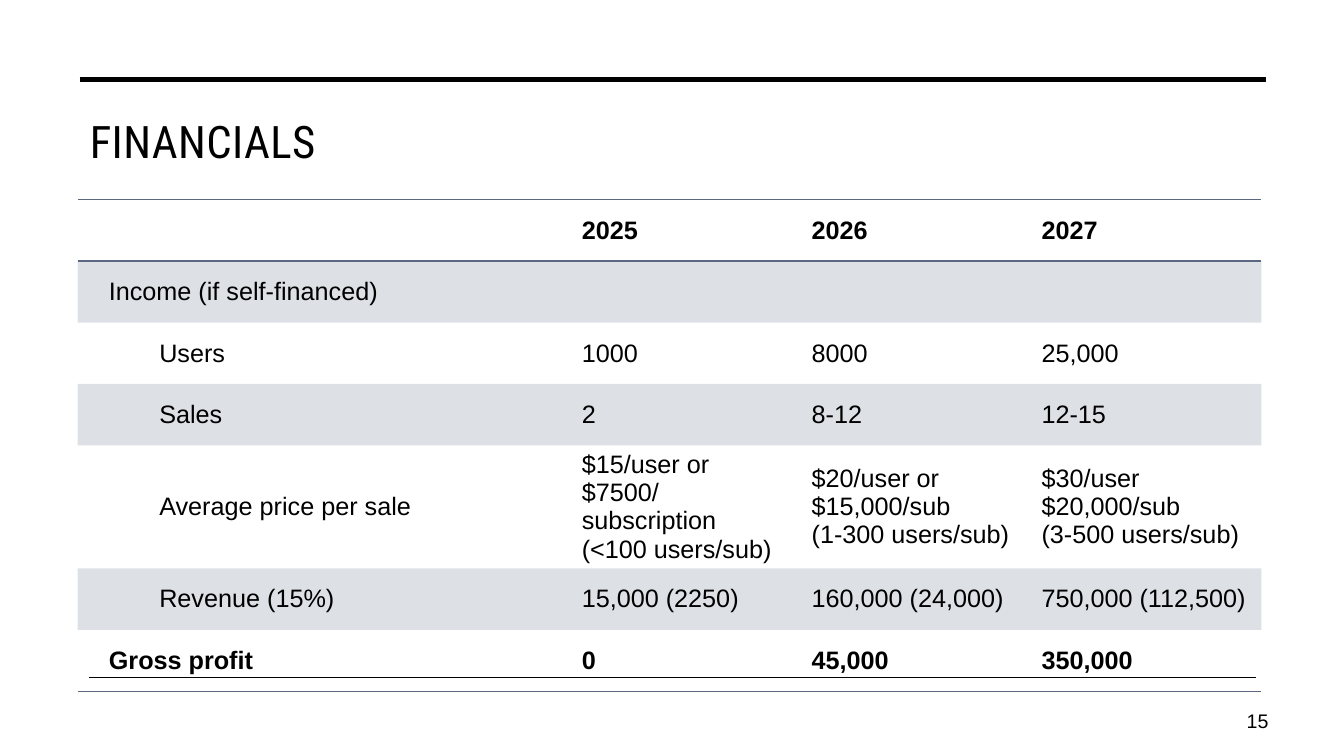
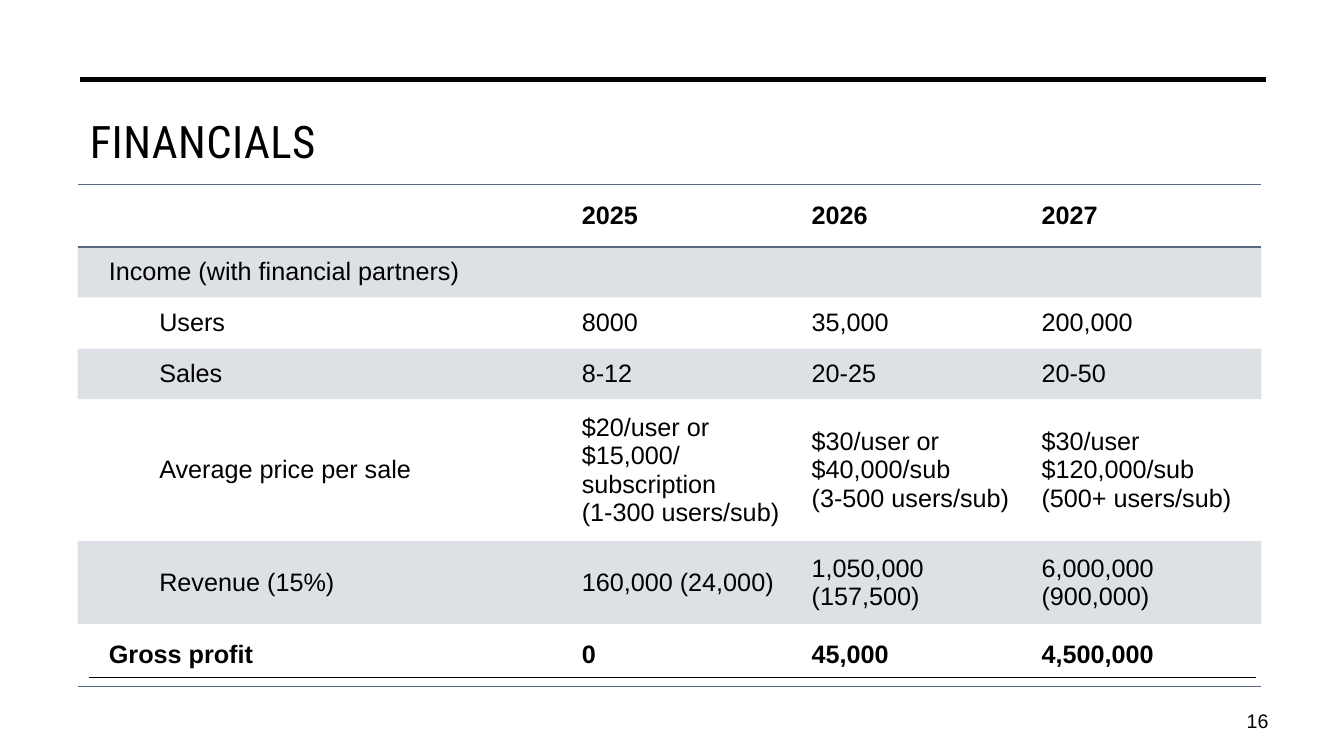
from lxml.etree import SubElement
from pptx import Presentation
from pptx.dml.color import RGBColor
from pptx.enum.shapes import MSO_CONNECTOR
from pptx.enum.text import MSO_ANCHOR, MSO_AUTO_SIZE, PP_ALIGN
from pptx.oxml.ns import qn
from pptx.util import Inches, Pt

COLORS = {"text": "000000", "slate": "596781"}
TITLE_FONT = "Roboto Condensed"
BODY_FONT = "Arial"
NO_GRID_STYLE = "{2D5ABB26-0587-4C30-8999-92F81FD0307C}"
COLUMN_WIDTHS = [4.9, 2.28, 2.28, 2.28]
HEADER = ["", "2025", "2026", "2027"]
INDENTED_ROWS = range(2, 6)
BANDED_ROWS = (1, 3, 5)

financials = [
    {
        "number": "15",
        "top": 1.98,
        "heights": [0.61, 0.61, 0.61, 0.61, 1.22, 0.61, 0.61],
        "rows": [
            HEADER,
            ["Income (if self-financed)", "", "", ""],
            ["Users", "1000", "8000", "25,000"],
            ["Sales", "2", "8-12", "12-15"],
            [
                "Average price per sale",
                "$15/user or\n$7500/subscription\n(<100 users/sub)",
                "$20/user or\n$15,000/sub\n(1-300 users/sub)",
                "$30/user\n$20,000/sub\n(3-500 users/sub)",
            ],
            ["Revenue (15%)", "15,000 (2250)", "160,000 (24,000)", "750,000 (112,500)"],
            ["Gross profit", "0", "45,000", "350,000"],
        ],
    },
    {
        "number": "16",
        "top": 1.83,
        "heights": [0.62, 0.5, 0.51, 0.5, 1.41, 0.82, 0.62],
        "rows": [
            HEADER,
            ["Income (with financial partners)", "", "", ""],
            ["Users", "8000", "35,000", "200,000"],
            ["Sales", "8-12", "20-25", "20-50"],
            [
                "Average price per sale",
                "$20/user or\n$15,000/\nsubscription\n(1-300 users/sub)",
                "$30/user or\n$40,000/sub\n(3-500 users/sub)",
                "$30/user\n$120,000/sub\n(500+ users/sub)",
            ],
            ["Revenue (15%)", "160,000 (24,000)", "1,050,000 (157,500)", "6,000,000 (900,000)"],
            ["Gross profit", "0", "45,000", "4,500,000"],
        ],
    },
]


def style_font(paragraph, name, size, bold=False):
    paragraph.font.name = name
    paragraph.font.size = Pt(size)
    paragraph.font.bold = bold
    paragraph.font.color.rgb = RGBColor.from_string(COLORS["text"])


def add_border(cell, side):
    line = SubElement(cell._tc.get_or_add_tcPr(), qn(f"a:{side}"), w=str(Pt(1)))
    fill = SubElement(line, qn("a:solidFill"))
    SubElement(fill, qn("a:srgbClr"), val=COLORS["slate"])


presentation = Presentation()
presentation.slide_width = Inches(13.33)
presentation.slide_height = Inches(7.5)
layout = presentation.slide_layouts[5]
slides = [presentation.slides.add_slide(layout) for _ in financials]

for left, right, y, width in [(0.79, 12.56, 0.79, 3.5), (0.88, 12.46, 6.72, 1)]:
    rule = slides[0].shapes.add_connector(
        MSO_CONNECTOR.STRAIGHT, Inches(left), Inches(y), Inches(right), Inches(y)
    )
    rule.line.color.rgb = RGBColor.from_string(COLORS["text"])
    rule.line.width = Pt(width)
    SubElement(rule.element.spPr, qn("a:effectLst"))
    layout.shapes.element.append(rule.element)

for slide, content in zip(slides, financials):
    title = slide.shapes.title
    title.left, title.top = Inches(0.79), Inches(1.08)
    title.width, title.height = Inches(11.8), Inches(1.15)
    title.text_frame.text = "FINANCIALS"
    title.text_frame.vertical_anchor = MSO_ANCHOR.TOP
    title.text_frame.auto_size = MSO_AUTO_SIZE.NONE
    paragraph = title.text_frame.paragraphs[0]
    paragraph.alignment = PP_ALIGN.LEFT
    style_font(paragraph, TITLE_FONT, 32)
    paragraph.runs[0].font._element.set("spc", "30")

    rows = content["rows"]
    frame = slide.shapes.add_table(
        len(rows), len(COLUMN_WIDTHS), Inches(0.77), Inches(content["top"]),
        Inches(sum(COLUMN_WIDTHS)), Inches(sum(content["heights"])),
    )
    table = frame.table
    table.horz_banding = False
    frame.element.find(f".//{qn('a:tableStyleId')}").text = NO_GRID_STYLE
    for column, width in zip(table.columns, COLUMN_WIDTHS):
        column.width = Inches(width)
    for row, height in zip(table.rows, content["heights"]):
        row.height = Inches(height)

    last_row = len(rows) - 1
    for row_index, values in enumerate(rows):
        for column_index, value in enumerate(values):
            cell = table.cell(row_index, column_index)
            cell.text = value
            cell.vertical_anchor = MSO_ANCHOR.MIDDLE
            is_label = column_index == 0 and row_index > 0
            if is_label:
                cell.margin_left = Inches(0.31)
            for paragraph in cell.text_frame.paragraphs:
                if is_label and row_index in INDENTED_ROWS:
                    paragraph.level = 1
                    properties = paragraph._p.get_or_add_pPr()
                    properties.set("marL", str(Inches(0.5)))
                    properties.set("indent", "0")
                style_font(paragraph, BODY_FONT, 18, row_index in (0, last_row))
            if row_index == 0:
                add_border(cell, "lnT")
            if row_index in (0, last_row):
                add_border(cell, "lnB")
            if row_index in BANDED_ROWS:
                cell.fill.solid()
                cell.fill.fore_color.rgb = RGBColor.from_string(COLORS["slate"])
                band_color = cell._tc.tcPr.find(f"{qn('a:solidFill')}/{qn('a:srgbClr')}")
                SubElement(band_color, qn("a:alpha"), val="20000")
            else:
                cell.fill.background()

    number_box = slide.shapes.add_textbox(
        Inches(11.94), Inches(6.95), Inches(0.74), Inches(0.4)
    )
    number_box.text_frame.word_wrap = True
    number_box.text_frame.vertical_anchor = MSO_ANCHOR.MIDDLE
    number_box.text_frame.text = content["number"]
    paragraph = number_box.text_frame.paragraphs[0]
    paragraph.alignment = PP_ALIGN.RIGHT
    style_font(paragraph, BODY_FONT, 14)

presentation.save("out.pptx")
